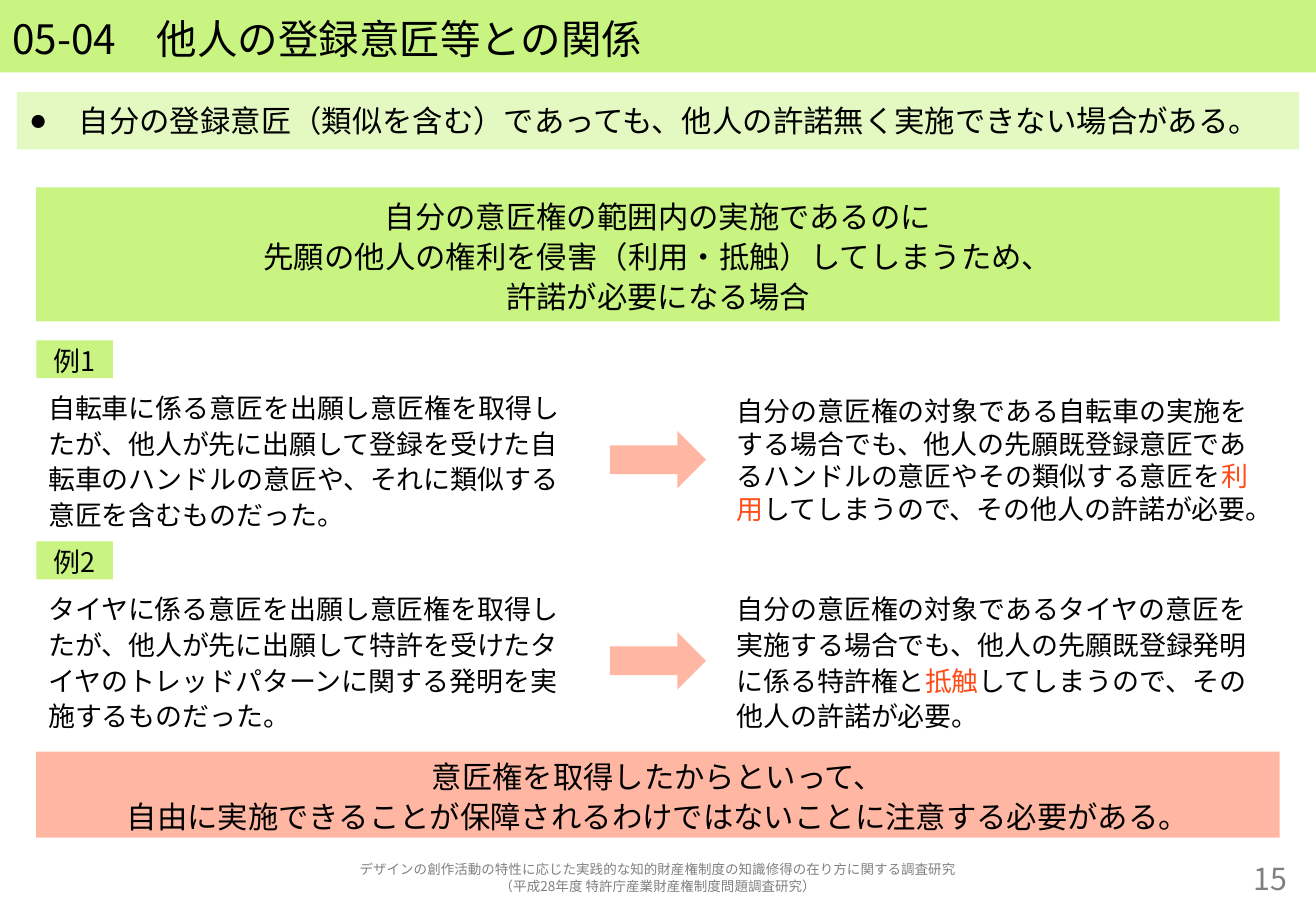
import pptx
import pptx.util
import pptx.dml.color
import pptx.enum.shapes
import pptx.enum.text
import pptx.oxml
import pptx.oxml.ns

Pt = pptx.util.Pt
RGBColor = pptx.dml.color.RGBColor
SHAPE = pptx.enum.shapes.MSO_SHAPE
ALIGN = pptx.enum.text.PP_ALIGN
ANCHOR = pptx.enum.text.MSO_ANCHOR
qn = pptx.oxml.ns.qn

GREEN = RGBColor(0xC9, 0xF4, 0x82)
PALE_GREEN = RGBColor(0xE4, 0xF9, 0xC1)
SALMON = RGBColor(0xFF, 0xB7, 0xA3)
RED = RGBColor(0xFF, 0x4C, 0x18)
BLACK = RGBColor(0, 0, 0)
GRAY = RGBColor(0x80, 0x80, 0x80)
FONT = "Noto Sans CJK JP"

TITLE = "05-04　他人の登録意匠等との関係"
LEAD = "自分の登録意匠（類似を含む）であっても、他人の許諾無く実施できない場合がある。"
CASE = [
    "自分の意匠権の範囲内の実施であるのに",
    "先願の他人の権利を侵害（利用・抵触）してしまうため、",
    "許諾が必要になる場合",
]
# label, situation, (before, keyword, after), line spacing of the result
EXAMPLES = [
    ("例1",
     "自転車に係る意匠を出願し意匠権を取得したが、他人が先に出願して登録を受けた"
     "自転車のハンドルの意匠や、それに類似する意匠を含むものだった。",
     ("自分の意匠権の対象である自転車の実施をする場合でも、他人の先願既登録意匠である"
      "ハンドルの意匠やその類似する意匠を", "利用", "してしまうので、その他人の許諾が必要。"),
     1.0),
    ("例2",
     "タイヤに係る意匠を出願し意匠権を取得したが、他人が先に出願して特許を受けた"
     "タイヤのトレッドパターンに関する発明を実施するものだった。",
     ("自分の意匠権の対象であるタイヤの意匠を実施する場合でも、他人の先願既登録発明に"
      "係る特許権と", "抵触", "してしまうので、その他人の許諾が必要。"),
     1.1),
]
CAUTION = [
    "意匠権を取得したからといって、",
    "自由に実施できることが保障されるわけではないことに注意する必要がある。",
]
FOOTER = [
    "デザインの創作活動の特性に応じた実践的な知的財産権制度の知識修得の在り方に関する調査研究",
    "（平成28年度 特許庁産業財産権制度問題調査研究）",
]
PAGE = "15"

W, H = 780, 540
EDGE, MARGIN = 10, 21.5
INNER_W = W - 2 * MARGIN
COL_W, COL_H = 329, 96.5
RIGHT_X = W - MARGIN - COL_W
ARROW_W, ARROW_H = 57, 34
LABEL_W, LABEL_H = 45.5, 22.5
ROW_TOP, ROW_STEP = 201.75, 119.25


def write(sp, lines, size, align=ALIGN.LEFT, color=BLACK, spacing=1.1):
    """Fill a shape; a line is a string, or a tuple whose second part is the red keyword."""
    tf = sp.text_frame
    tf.word_wrap = True
    tf.auto_size = pptx.enum.text.MSO_AUTO_SIZE.NONE
    tf.vertical_anchor = ANCHOR.MIDDLE
    for i, line in enumerate(lines):
        p = tf.add_paragraph() if i else tf.paragraphs[0]
        p.alignment = align
        p.line_spacing = spacing
        parts = (line,) if isinstance(line, str) else line
        for j, part in enumerate(parts):
            r = p.add_run()
            r.text = part
            r.font.name = FONT
            r.font.size = Pt(size)
            r.font.color.rgb = RED if j == 1 else color
            ea = pptx.oxml.parse_xml(
                f'<a:ea {pptx.oxml.ns.nsdecls("a")} typeface="{FONT}"/>')
            r.font._element.find(qn("a:latin")).addnext(ea)


def fill(sp, color):
    sp.fill.solid()
    sp.fill.fore_color.rgb = color
    sp.line.fill.background()


def add_block(s, kind, box, color):
    sp = s.shapes.add_shape(kind, *map(Pt, box))
    sp.shadow.inherit = False
    fill(sp, color)
    return sp


def add_text(s, box, lines, size, **style):
    write(s.shapes.add_textbox(*map(Pt, box)), lines, size, **style)


def fill_placeholder(sp, box, color, line, size):
    sp.left, sp.top, sp.width, sp.height = map(Pt, box)
    fill(sp, color)
    write(sp, [line], size)


def add_example(s, top, label, situation, result, spacing):
    tag = add_block(s, SHAPE.RECTANGLE, (MARGIN, top, LABEL_W, LABEL_H), GREEN)
    write(tag, [label], 16, ALIGN.CENTER)
    text_top = top + LABEL_H
    add_text(s, (MARGIN, text_top, COL_W, COL_H), [situation], 16)
    add_text(s, (RIGHT_X, text_top, COL_W, COL_H), [result], 16, spacing=spacing)
    arrow = ((W - ARROW_W) / 2, text_top + (COL_H - ARROW_H) / 2, ARROW_W, ARROW_H)
    add_block(s, SHAPE.RIGHT_ARROW, arrow, SALMON)


def main():
    prs = pptx.Presentation()
    prs.slide_width, prs.slide_height = Pt(W), Pt(H)
    s = prs.slides.add_slide(prs.slide_layouts[1])

    fill_placeholder(s.shapes.title, (0, 0, W, 43), GREEN, TITLE, 24)
    body = s.placeholders[1]
    fill_placeholder(body, (EDGE, 54.5, W - 2 * EDGE, 34), PALE_GREEN, LEAD, 18)
    body.text_frame.vertical_anchor = ANCHOR.TOP
    pPr = body.text_frame.paragraphs[0]._p.get_or_add_pPr()
    pPr.set("marL", str(Pt(29.5)))
    pPr.set("indent", str(-Pt(29.5)))
    pPr.append(pptx.oxml.parse_xml(
        f'<a:buChar {pptx.oxml.ns.nsdecls("a")} char="●"/>'))

    for top, height, color, lines in [(111, 79.5, GREEN, CASE),
                                      (445.5, 51, SALMON, CAUTION)]:
        banner = add_block(s, SHAPE.RECTANGLE, (MARGIN, top, INNER_W, height), color)
        write(banner, lines, 18, ALIGN.CENTER)

    for i, example in enumerate(EXAMPLES):
        add_example(s, ROW_TOP + i * ROW_STEP, *example)

    add_text(s, (EDGE, 508.5, W - 2 * EDGE, 22.5), FOOTER, 8,
             align=ALIGN.CENTER, color=GRAY)
    add_text(s, (W - EDGE - 97, 508.5, 97, 22.5), [PAGE], 18,
             align=ALIGN.RIGHT, color=GRAY)
    prs.save("out.pptx")


if __name__ == "__main__":
    main()
